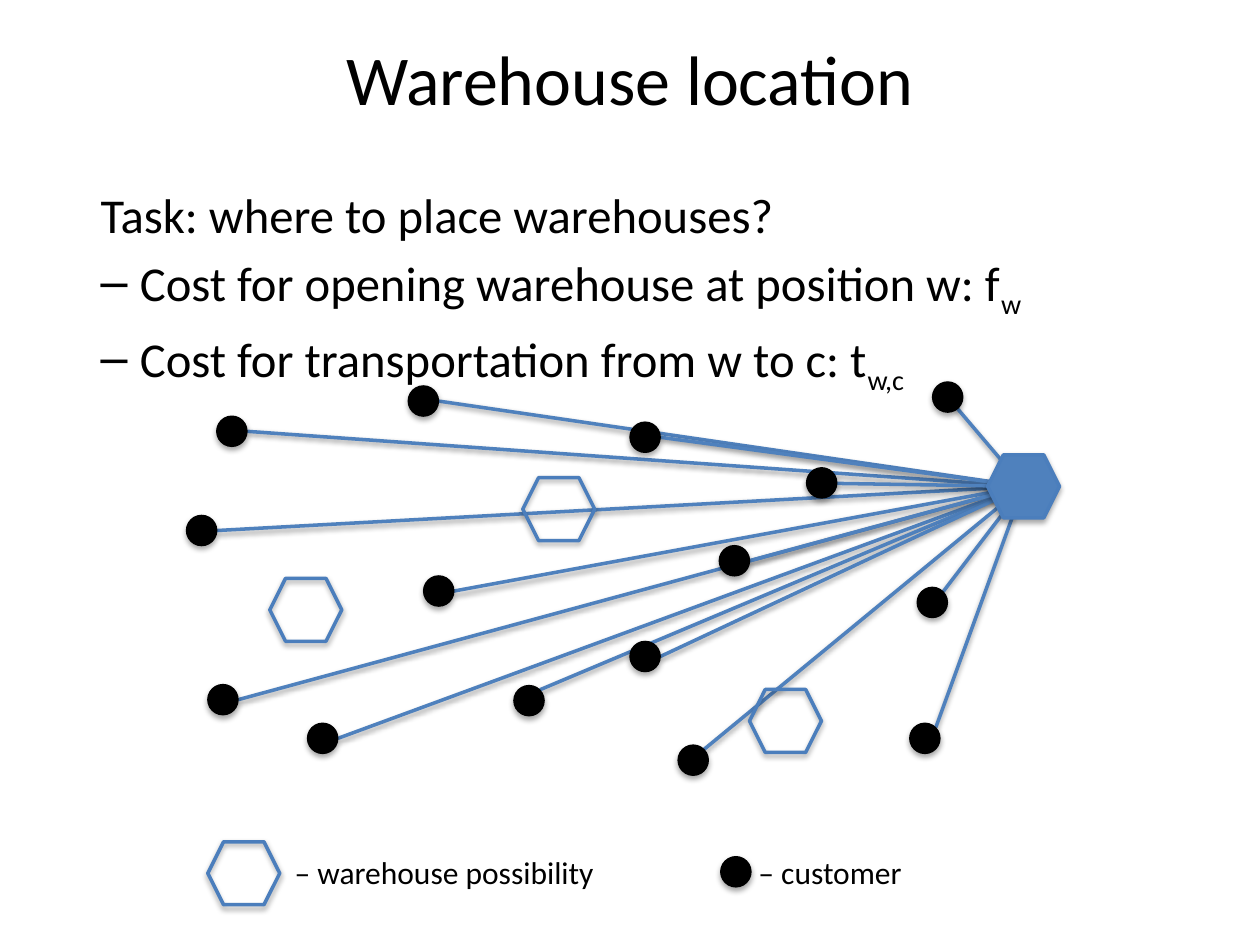
import pptx
import pptx.dml.color
import pptx.enum.shapes
import pptx.enum.text
import pptx.oxml
import pptx.oxml.ns
import pptx.util

Cm = pptx.util.Cm
Pt = pptx.util.Pt
SHAPES = pptx.enum.shapes.MSO_SHAPE
ALIGN = pptx.enum.text.PP_ALIGN
ANCHOR = pptx.enum.text.MSO_ANCHOR

BLACK = pptx.dml.color.RGBColor(0x00, 0x00, 0x00)
ROUTE_BLUE = pptx.dml.color.RGBColor(0x4F, 0x81, 0xBD)
OUTLINE_BLUE = pptx.dml.color.RGBColor(0x4B, 0x7E, 0xBC)

FONT = "Calibri"
DOT = 0.61
HEX_WIDTH, HEX_HEIGHT = 1.45, 1.27

RIGHT, LEFT, CENTRE, UPPER_RIGHT = (1, 0.5), (0, 0.5), (0.5, 0.5), (0.86, 0.14)
CUSTOMERS = [
    (4.47, 0.08, RIGHT), (0, 2.69, RIGHT), (14.73, 4.14, UPPER_RIGHT),
    (4.78, 3.91, RIGHT), (0.43, 6.10, RIGHT), (2.44, 6.88, RIGHT),
    (0.61, 0.69, RIGHT), (6.60, 6.12, UPPER_RIGHT), (8.94, 5.23, RIGHT),
    (10.74, 3.30, RIGHT), (8.94, 0.81, RIGHT), (12.50, 1.73, LEFT),
    (15.04, 0, CENTRE), (9.91, 7.32, UPPER_RIGHT), (14.58, 6.88, UPPER_RIGHT),
]
POSSIBLE_SITES = [(1.68, 3.96), (6.78, 1.93), (11.35, 6.20)]
OPEN_SITE = (16.15, 1.47)


def add_shadow(shape, distance, opacity):
    """Give a shape or connector a soft shadow that falls straight down."""
    properties = shape._element.spPr
    for old in properties.findall(pptx.oxml.ns.qn("a:effectLst")):
        properties.remove(old)
    properties.append(pptx.oxml.parse_xml(
        f'<a:effectLst {pptx.oxml.ns.nsdecls("a")}>'
        f'<a:outerShdw blurRad="40000" dist="{distance}" dir="5400000" rotWithShape="0">'
        f'<a:srgbClr val="000000"><a:alpha val="{opacity}"/></a:srgbClr>'
        '</a:outerShdw></a:effectLst>'))


def add_mark(page, kind, box, fill, line, weight):
    """Draw a shadowed preset shape in the given box."""
    mark = page.shapes.add_shape(kind, *map(Cm, box))
    if fill is None:
        mark.fill.background()
    else:
        mark.fill.solid()
        mark.fill.fore_color.rgb = fill
    mark.line.color.rgb = line
    mark.line.width = Pt(weight)
    add_shadow(mark, 23000, 35000)


def add_warehouse(page, left, top, fill=None):
    """Draw a warehouse hexagon, filled when it is open."""
    add_mark(page, SHAPES.HEXAGON, (left, top, HEX_WIDTH, HEX_HEIGHT),
             fill, OUTLINE_BLUE, 2)


def add_customer(page, left, top):
    """Draw a customer dot."""
    add_mark(page, SHAPES.OVAL, (left, top, DOT, DOT), BLACK, BLACK, 0.75)


def add_route(page, start, end):
    """Draw a transport route between two points."""
    route = page.shapes.add_connector(
        pptx.enum.shapes.MSO_CONNECTOR.STRAIGHT, *map(Cm, (*start, *end)))
    route.line.color.rgb = ROUTE_BLUE
    route.line.width = Pt(2)
    add_shadow(route, 20000, 38000)


def add_frame(page, box, anchor=ANCHOR.TOP):
    """Add a wrapping text box and return its text frame."""
    frame = page.shapes.add_textbox(*map(Cm, box)).text_frame
    frame.word_wrap = True
    frame.vertical_anchor = anchor
    return frame


def add_text(para, text, size, align=ALIGN.LEFT, subscript=False):
    """Append a formatted span to a paragraph."""
    para.alignment = align
    span = para.add_run()
    span.text = text
    span.font.name = FONT
    span.font.size = Pt(size)
    span.font.color.rgb = BLACK
    if subscript:
        span._r.get_or_add_rPr().set("baseline", "-25000")


def add_dash(para):
    """Give a paragraph a hanging dash bullet."""
    properties = para._p.get_or_add_pPr()
    properties.set("marL", str(Cm(0.79)))
    properties.set("indent", str(-Cm(0.79)))
    properties.append(pptx.oxml.parse_xml(
        f'<a:buChar {pptx.oxml.ns.nsdecls("a")} char="–"/>'))


def build_title(page, box):
    """Write the slide title."""
    frame = add_frame(page, box, ANCHOR.MIDDLE)
    add_text(frame.paragraphs[0], "Warehouse location", 40, align=ALIGN.CENTER)


def build_task(page, box):
    """Write the task and its two costs."""
    frame = add_frame(page, box)
    add_text(frame.paragraphs[0], "Task: where to place warehouses?", 27.8)
    for text, index in [("Cost for opening warehouse at position w: f", "w"),
                        ("Cost for transportation from w to c: t", "w,c")]:
        para = frame.add_paragraph()
        para.space_before = Pt(5.5)
        add_dash(para)
        add_text(para, text, 27.8)
        add_text(para, index, 27.8, subscript=True)


def build_map(page, left, top):
    """Draw the routes, warehouses and customers."""
    hub = (left + OPEN_SITE[0] + HEX_WIDTH / 2, top + OPEN_SITE[1] + HEX_HEIGHT / 2)
    for x, y, (across, down) in CUSTOMERS:
        add_route(page, hub, (left + x + across * DOT, top + y + down * DOT))
    for x, y in POSSIBLE_SITES:
        add_warehouse(page, left + x, top + y)
    add_warehouse(page, left + OPEN_SITE[0], top + OPEN_SITE[1], fill=ROUTE_BLUE)
    for x, y, _ in CUSTOMERS:
        add_customer(page, left + x, top + y)


def build_legend(page, left, top):
    """Explain the two marks."""
    for offset, width, text in [(1.5, 7, "– warehouse possibility"),
                                (10.85, 4, "– customer")]:
        frame = add_frame(page, (left + offset, top + 0.1, width, 1.02))
        add_text(frame.paragraphs[0], text, 18)
    add_warehouse(page, left, top)
    add_customer(page, left + 10.34, top + 0.3)


def main():
    """Build and save the deck."""
    deck = pptx.Presentation()
    deck.slide_width, deck.slide_height = Cm(25.4), Cm(19.05)
    page = deck.slides.add_slide(deck.slide_layouts[6])
    build_title(page, (1.27, 0.66, 22.86, 1.8))
    build_task(page, (1.78, 3.61, 22.3, 3.66))
    build_map(page, 3.76, 7.7)
    build_legend(page, 4.19, 16.97)
    deck.save("out.pptx")


if __name__ == "__main__":
    main()
